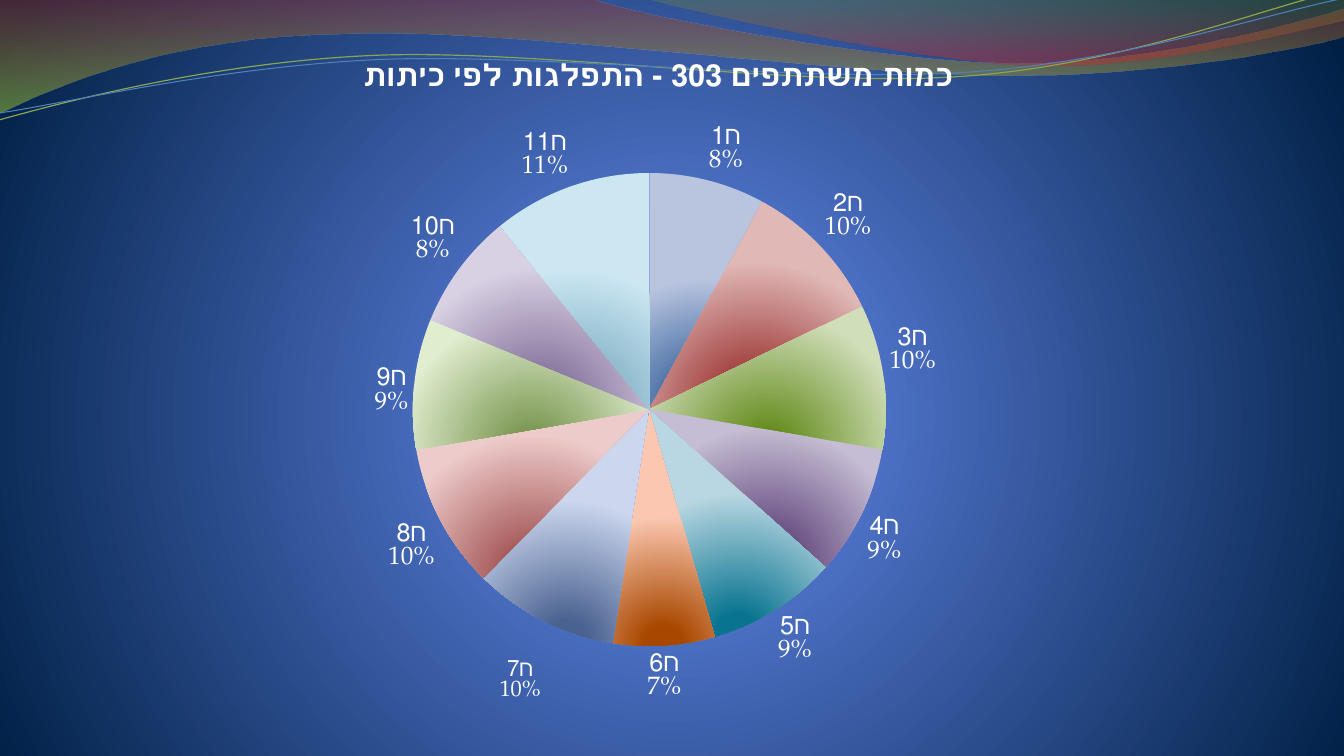
from lxml import etree
from pptx import Presentation
from pptx import util as u
from pptx.chart.data import CategoryChartData
from pptx.dml.color import RGBColor
from pptx.enum import chart as charts
from pptx.oxml import parse_xml
from pptx.oxml.ns import qn

PX = 9144
CHART_NS = "http://schemas.openxmlformats.org/drawingml/2006/chart"

TITLE = "כמות משתתפים 303 - התפלגות לפי כיתות"
CLASSES = [
    ("ח1", 8, "2F5C98", "B9C5DF"),
    ("ח2", 10, "982E2C", "E0B9B7"),
    ("ח3", 10, "688E22", "D0DEB9"),
    ("ח4", 9, "5C4078", "C5BDD3"),
    ("ח5", 9, "087490", "B9D7E2"),
    ("ח6", 7, "A84800", "FBC7B0"),
    ("ח7", 10, "4A6290", "CCD7EE"),
    ("ח8", 10, "A05050", "EDCBCA"),
    ("ח9", 9, "7E9A56", "E0EDCF"),
    ("ח10", 8, "7E6C96", "D8D0E3"),
    ("ח11", 11, "76AABF", "CCE6F2"),
]
SEVENTH, NINTH = 6, 8

WIDE_WAVE = [
    (0, 0), (587, -1),
    (634, 17, 885, 63, 1011, 63), (1138, 63, 1278, 26, 1333, 9),
    (1335, 36),
    (1311, 44, 1160, 76, 994, 75), (829, 75, 509, 28, 343, 34),
    (172, 36, 61, 83, -1, 113),
]
RIGHT_WAVE = [
    (639, -1),
    (679, 11, 909, 62, 1025, 65), (1141, 69, 1282, 32, 1333, 21),
    (1333, 0),
]
GREEN_LINE = [
    (-1, 119),
    (64, 101, 211, 62, 369, 55), (527, 48, 790, 87, 950, 76),
    (1110, 66, 1252, 8, 1331, -10),
]
BLUE_LINE = [
    (0, 112),
    (63, 103, 218, 66, 378, 59), (537, 53, 796, 82, 955, 72),
    (1115, 62, 1255, 14, 1334, -2),
]


def color(value):
    return RGBColor.from_string(value)


def fill_gradient(gradient, stops, center=None):
    for child in list(gradient):
        gradient.remove(child)
    stop_list = etree.SubElement(gradient, qn("a:gsLst"))
    for place, value, opacity in stops:
        stop = etree.SubElement(stop_list, qn("a:gs"), pos=str(place * 1000))
        tone = etree.SubElement(stop, qn("a:srgbClr"), val=value)
        if opacity < 100:
            etree.SubElement(tone, qn("a:alpha"), val=str(opacity * 1000))
    if center:
        circle = etree.SubElement(gradient, qn("a:path"), path="circle")
        sides = {side: str(share * 1000) for side, share in zip("ltrb", center)}
        etree.SubElement(circle, qn("a:fillToRect"), sides)
    else:
        etree.SubElement(gradient, qn("a:lin"), ang="5400000", scaled="0")


def manual_layout(**values):
    parts = "".join(f'<c:{name} val="{value}"/>' for name, value in values.items())
    return parse_xml(
        f'<c:layout xmlns:c="{CHART_NS}"><c:manualLayout>{parts}</c:manualLayout></c:layout>')


def replace_layout(owner, after, layout):
    for old in owner.findall(qn("c:layout")):
        owner.remove(old)
    if after is None:
        owner.insert(0, layout)
    else:
        owner.find(qn(after)).addnext(layout)


class SlidePainter:
    font = "TeX Gyre Pagella"
    ink = "FFFFFF"

    def __init__(self, page):
        self.page = page

    def background(self, stops, center):
        self.page.background.fill.gradient()
        fill_gradient(self.page.element.find(f".//{qn('a:gradFill')}"), stops, center)

    def outline(self, steps, closed):
        points = [(round(step[i] * PX), round(step[i + 1] * PX))
                  for step in steps for i in range(0, len(step), 2)]
        builder = self.page.shapes.build_freeform(*points[0], scale=1.0)
        builder.add_line_segments(points[1:], close=closed)
        shape = builder.convert_to_shape()
        shape.shadow.inherit = False
        segments = iter(shape.element.findall(f".//{qn('a:lnTo')}"))
        for step in steps[1:]:
            segment = next(segments)
            if len(step) == 6:
                curve = etree.Element(qn("a:cubicBezTo"))
                segment.addprevious(curve)
                for part in (segment, next(segments), next(segments)):
                    curve.append(part[0])
                    part.getparent().remove(part)
        return shape

    def wave(self, steps, stops):
        shape = self.outline(steps, True)
        shape.line.fill.background()
        shape.fill.gradient()
        fill_gradient(shape.element.find(f".//{qn('a:gradFill')}"), stops)

    def line(self, steps, value, width):
        shape = self.outline(steps, False)
        shape.fill.background()
        shape.line.color.rgb = color(value)
        shape.line.width = u.Pt(width)

    def style(self, font, size, bold=False):
        font.name = self.font
        font.size = u.Pt(size)
        font.bold = bold
        font.color.rgb = color(self.ink)

    def pie(self, left, top, width, height, title, rows):
        data = CategoryChartData()
        data.categories = [row[0] for row in rows]
        data.add_series("Series 1", [row[1] for row in rows])
        frame = self.page.shapes.add_chart(
            charts.XL_CHART_TYPE.PIE,
            *(length * PX for length in (left, top, width, height)), data)
        chart = frame.chart
        self.style(chart.font, 18)
        chart.has_legend = False
        chart.has_title = True
        chart.chart_title.text_frame.text = title
        chart.chart_title.include_in_layout = False
        self.style(chart.chart_title.text_frame.paragraphs[0].runs[0].font, 21.6, True)
        replace_layout(chart.element.find(f".//{qn('c:title')}"), "c:tx", manual_layout(
            xMode="edge", yMode="edge", x=0.23, y=0.01))
        replace_layout(chart.element.find(f".//{qn('c:plotArea')}"), None, manual_layout(
            layoutTarget="inner", xMode="edge", yMode="edge",
            x=0.28, y=0.19, w=0.43, h=0.71))

        plot = chart.plots[0]
        plot.vary_by_categories = True
        series = plot.series[0]
        for index in range(len(rows)):
            look = series.points[index].format
            look.line.fill.background()
            look.fill.gradient()
        gradients = chart.element.findall(f".//{qn('a:gradFill')}")
        for gradient, (name, value, dark, pale) in zip(gradients, rows):
            stops = [(0, dark, 100), (15, dark, 100), (100, pale, 100)]
            fill_gradient(gradient, stops, (50, 100, 50, 0))
        self.labels(chart, series, rows)

    def labels(self, chart, series, rows):
        labels = series.data_labels
        labels.position = charts.XL_LABEL_POSITION.OUTSIDE_END
        self.style(labels.font, 18)

        seventh = series.points[SEVENTH].data_label
        seventh.text_frame.text = f"{rows[SEVENTH][0]}\n{rows[SEVENTH][1]}%"
        for para in seventh.text_frame.paragraphs:
            for span in para.runs:
                self.style(span.font, 16)
        ninth = series.points[NINTH].data_label
        self.style(ninth.font, 18)
        for label in (seventh, ninth):
            label.position = charts.XL_LABEL_POSITION.OUTSIDE_END
        for moved in chart.element.findall(f".//{qn('c:dLbl')}"):
            replace_layout(moved, "c:idx", manual_layout(x=0, y=0.05))

        for name, shown in (("showVal", 0), ("showCatName", 1), ("showPercent", 1),
                            ("showLeaderLines", 0)):
            for flag in chart.element.findall(f".//{qn('c:' + name)}"):
                flag.set("val", str(shown))
        for flag in chart.element.findall(f".//{qn('c:showBubbleSize')}"):
            separator = etree.Element(qn("c:separator"))
            separator.text = "\n"
            flag.addnext(separator)


def main():
    deck = Presentation()
    deck.slide_width = u.Inches(13.33)
    deck.slide_height = u.Inches(7.5)
    painter = SlidePainter(deck.slides.add_slide(deck.slide_layouts[6]))
    painter.background(
        [(0, "4D75D6", 100), (25, "4E72C7", 100), (100, "001F44", 100)],
        (10, 110, 10, 100))
    painter.wave(WIDE_WAVE, [(0, "973330", 45), (100, "95C238", 55)])
    painter.wave(RIGHT_WAVE, [(0, "769537", 30), (80, "BE3330", 45)])
    painter.line(GREEN_LINE, "89A54F", 0.85)
    painter.line(BLUE_LINE, "4F81BD", 0.75)
    painter.pie(104, 46, 1091, 661, TITLE, CLASSES)
    deck.save("out.pptx")


if __name__ == "__main__":
    main()
